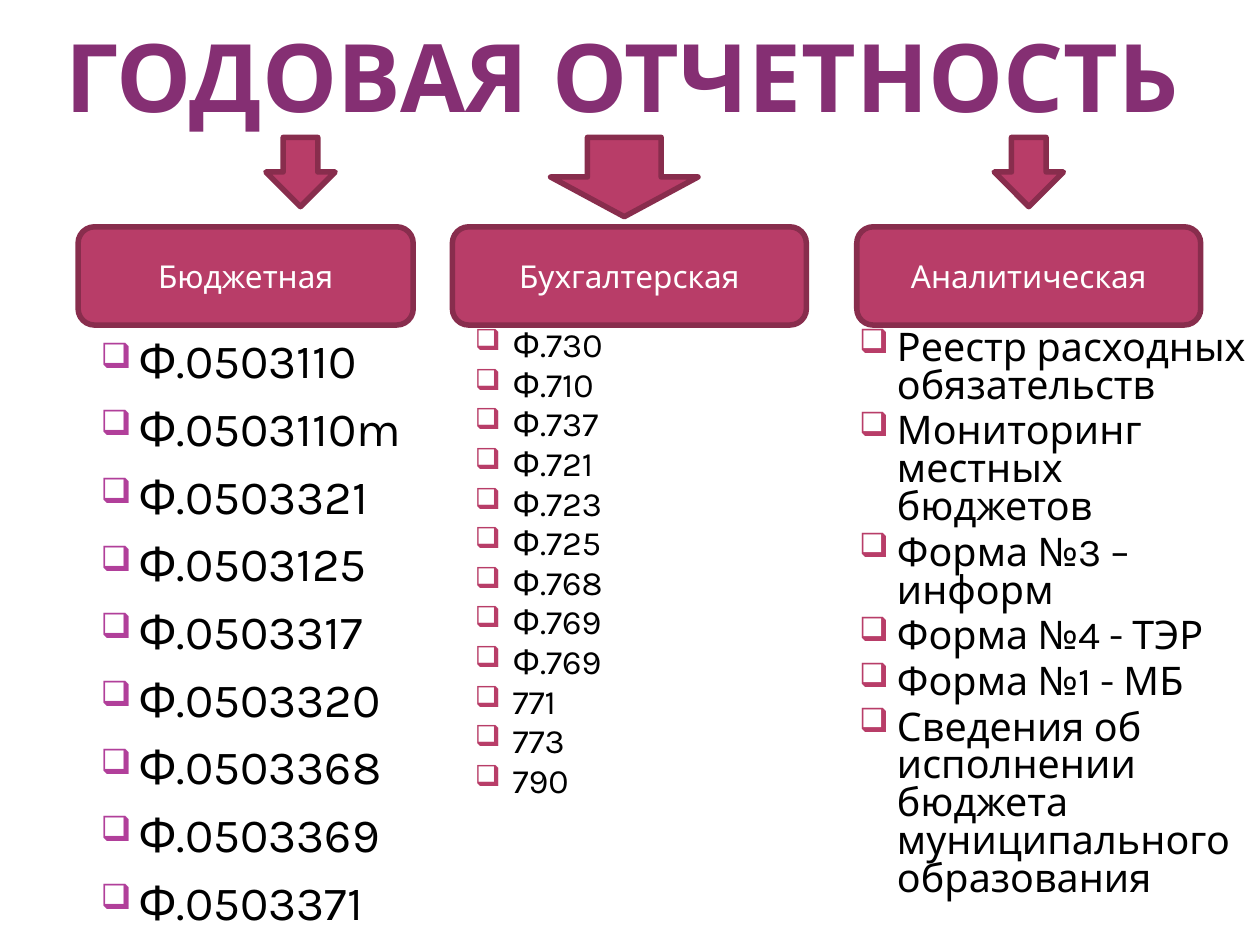
from lxml.etree import SubElement
from pptx import Presentation
from pptx.dml.color import RGBColor
from pptx.enum.shapes import MSO_SHAPE
from pptx.enum.text import MSO_ANCHOR, MSO_AUTO_SIZE, PP_ALIGN
from pptx.oxml.ns import qn
from pptx.util import Inches, Pt

THEME = {
    "font": "Karla", "title": "852F73", "fill": "B83D68", "line": "882D4D",
    "text": "000000", "on_fill": "FFFFFF", "violet": "B13F9A",
    "title_size": 54, "label_size": 18, "line_width": 3.15,
}
TITLE = "ГОДОВАЯ ОТЧЕТНОСТЬ"
ARROW_TOP, LABEL_TOP, LABEL_HEIGHT = 1.09, 1.8, 0.78
LIST_TOP = LABEL_TOP + LABEL_HEIGHT
INDENT = 0.3

# Each report type: label and arrow are (left, width), list is (left, width, height)
REPORTS = [
    {"name": "Бюджетная", "label": (0.62, 2.66), "arrow": (2.11, 0.55), "arrow_height": 0.55,
     "list": (0.7, 2.66, 4.53),
     "format": {"size": 27.2, "space": 6, "bullet": (THEME["violet"], 73)},
     "forms": ["Ф.0503110", "Ф.0503110m", "Ф.0503321", "Ф.0503125", "Ф.0503317",
               "Ф.0503320", "Ф.0503368", "Ф.0503369", "Ф.0503371"]},
    {"name": "Бухгалтерская", "label": (3.59, 2.81), "arrow": (4.37, 1.17), "arrow_height": 0.63,
     "list": (3.67, 2.66, 4.4),
     "format": {"size": 19.5, "space": 3.9, "spacing": 0.8, "bullet": (THEME["fill"], 85)},
     "forms": ["Ф.730", "Ф.710", "Ф.737", "Ф.721", "Ф.723", "Ф.725", "Ф.768",
               "Ф.769", "Ф.769", "771", "773", "790"]},
    {"name": "Аналитическая", "label": (6.8, 2.73), "arrow": (7.89, 0.55), "arrow_height": 0.55,
     "list": (6.72, 3.28, 4.53),
     "format": {"size": 22.5, "space": 4.5, "spacing": 0.8, "bullet": (THEME["fill"], 85)},
     "forms": ["Реестр расходных обязательств", "Мониторинг местных бюджетов",
               "Форма №3 – информ", "Форма №4 - ТЭР", "Форма №1 - МБ",
               "Сведения об исполнении бюджета муниципального образования"]},
]


def add_bullet(paragraph, color, percent):
    properties = paragraph._p.get_or_add_pPr()
    properties.set("marL", str(Inches(INDENT)))
    properties.set("indent", str(-Inches(INDENT)))
    bullet_color = SubElement(properties, qn("a:buClr"))
    SubElement(bullet_color, qn("a:srgbClr"), val=color)
    SubElement(properties, qn("a:buSzPct"), val=str(percent * 1000))
    SubElement(properties, qn("a:buChar"), char="❑")


def write(frame, lines, *, size, color=THEME["text"], bold=False, align=PP_ALIGN.LEFT,
          anchor=MSO_ANCHOR.TOP, space=0, spacing=None, bullet=None):
    frame.word_wrap = True
    frame.auto_size = MSO_AUTO_SIZE.NONE
    frame.vertical_anchor = anchor
    for index, line in enumerate(lines):
        paragraph = frame.add_paragraph() if index else frame.paragraphs[0]
        if bullet:
            add_bullet(paragraph, *bullet)
        paragraph.alignment = align
        paragraph.space_before = Pt(space if index else 0)
        if spacing:
            paragraph.line_spacing = spacing
        run = paragraph.add_run()
        run.text = line
        run.font.name = THEME["font"]
        run.font.size = Pt(size)
        run.font.bold = bold
        run.font.color.rgb = RGBColor.from_string(color)


def add_block(slide, kind, left, top, width, height):
    block = slide.shapes.add_shape(kind, Inches(left), Inches(top), Inches(width), Inches(height))
    block.shadow.inherit = False
    block.fill.solid()
    block.fill.fore_color.rgb = RGBColor.from_string(THEME["fill"])
    block.line.color.rgb = RGBColor.from_string(THEME["line"])
    block.line.width = Pt(THEME["line_width"])
    return block


def main():
    deck = Presentation()
    deck.slide_width, deck.slide_height = Inches(10), Inches(7.5)
    slide = deck.slides.add_slide(deck.slide_layouts[5])

    # Title
    title = slide.shapes.title
    title.left, title.top, title.width, title.height = map(Inches, (0.47, 0.39, 8.95, 0.65))
    frame = title.text_frame
    frame.margin_left = frame.margin_right = Inches(0.05)
    frame.margin_top = frame.margin_bottom = 0
    write(frame, [TITLE], size=THEME["title_size"], color=THEME["title"], bold=True,
          anchor=MSO_ANCHOR.BOTTOM)

    for report in REPORTS:
        # Arrow from the title
        left, width = report["arrow"]
        add_block(slide, MSO_SHAPE.DOWN_ARROW, left, ARROW_TOP, width, report["arrow_height"])

        # Report type
        left, width = report["label"]
        label = add_block(slide, MSO_SHAPE.ROUNDED_RECTANGLE, left, LABEL_TOP, width, LABEL_HEIGHT)
        write(label.text_frame, [report["name"]], size=THEME["label_size"],
              color=THEME["on_fill"], align=PP_ALIGN.CENTER, anchor=MSO_ANCHOR.MIDDLE)

        # List of forms
        left, width, height = report["list"]
        forms = slide.shapes.add_textbox(Inches(left), Inches(LIST_TOP), Inches(width), Inches(height))
        write(forms.text_frame, report["forms"], **report["format"])

    deck.save("out.pptx")


if __name__ == "__main__":
    main()
